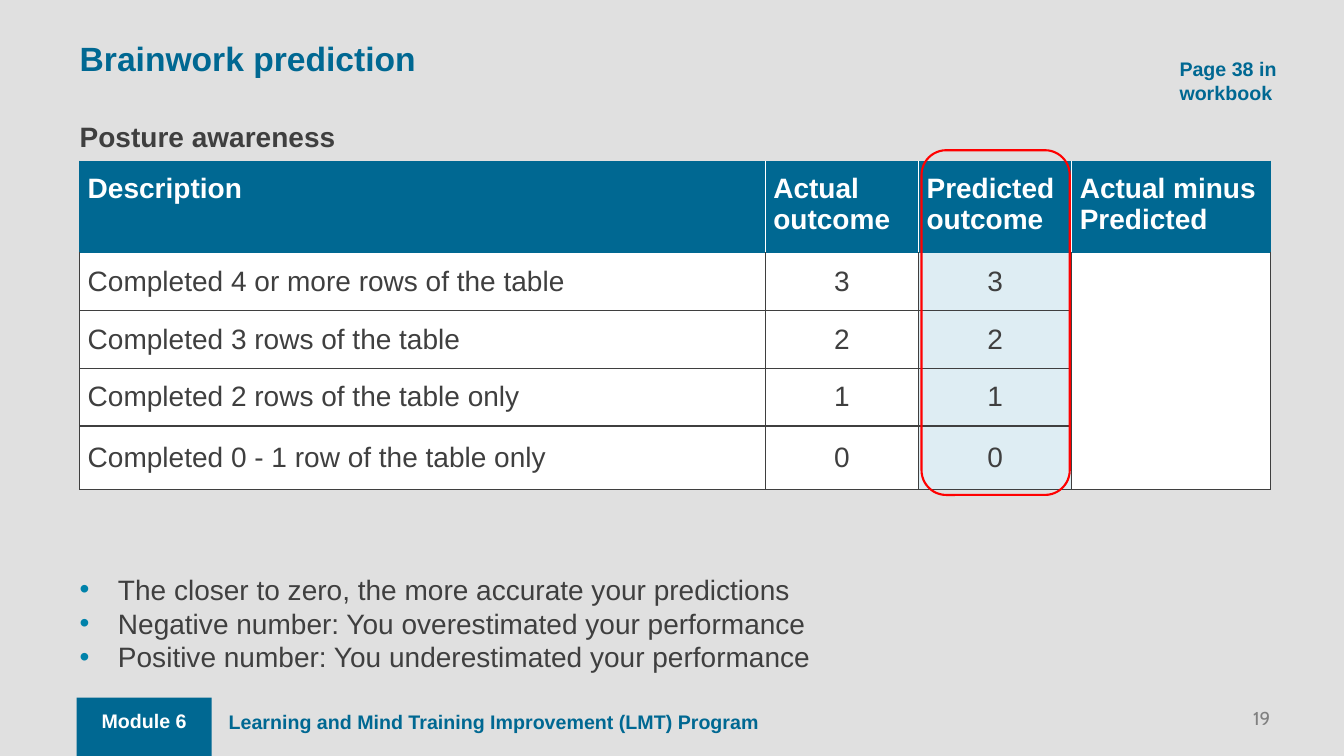
from lxml.etree import SubElement
from pptx import Presentation
from pptx.dml.color import RGBColor
from pptx.enum.shapes import MSO_SHAPE
from pptx.enum.text import MSO_ANCHOR, PP_ALIGN
from pptx.oxml.ns import qn
from pptx.util import Inches, Pt

COLORS = {
    "background": "E0E0E0", "teal": "006892", "bullet": "0082AA", "text": "3F3F3F",
    "white": "FFFFFF", "highlight": "DEEDF3", "red": "FF0000", "grey": "808080",
}
COLUMN_WIDTHS = [6.8, 1.52, 1.52, 1.97]
ROW_HEIGHTS = [0.9, 0.57, 0.57, 0.57, 0.63]
ROWS = [
    ["Description", "Actual outcome", "Predicted outcome", "Actual minus Predicted"],
    ["Completed 4 or more rows of the table", "3", "3", ""],
    ["Completed 3 rows of the table", "2", "2", ""],
    ["Completed 2 rows of the table only", "1", "1", ""],
    ["Completed 0 - 1 row of the table only", "0", "0", ""],
]
PREDICTED = 2
DIFFERENCE = 3
NOTES = [
    "The closer to zero, the more accurate your predictions",
    "Negative number: You overestimated your performance",
    "Positive number: You underestimated your performance",
]
DEFAULT_INSETS = (0.1, 0.05, 0.1, 0.05)
NO_INSETS = (0, 0, 0, 0)


def rgb(name):
    return RGBColor.from_string(COLORS[name])


class SlideBuilder:
    def __init__(self, slide, font="Arial"):
        self.slide = slide
        self.font = font

    def background(self, color):
        fill = self.slide.background.fill
        fill.solid()
        fill.fore_color.rgb = rgb(color)

    def format(self, paragraph, size, color, bold=False, align=PP_ALIGN.LEFT, font=None):
        paragraph.alignment = align
        for run in paragraph.runs:
            run.font.name = font or self.font
            run.font.size = Pt(size)
            run.font.bold = bold
            run.font.color.rgb = rgb(color)

    def text(self, box, text, size, color, insets=DEFAULT_INSETS,
             anchor=MSO_ANCHOR.TOP, **style):
        shape = self.slide.shapes.add_textbox(*map(Inches, box))
        frame = shape.text_frame
        frame.word_wrap = True
        frame.vertical_anchor = anchor
        (frame.margin_left, frame.margin_top,
         frame.margin_right, frame.margin_bottom) = map(Inches, insets)
        frame.text = text
        for paragraph in frame.paragraphs:
            self.format(paragraph, size, color, **style)
        return shape

    def bullets(self, box, lines, size, color):
        shape = self.text(box, "\n".join(lines), size, color, NO_INSETS)
        for paragraph in shape.text_frame.paragraphs:
            properties = paragraph._p.get_or_add_pPr()
            properties.set("marL", str(Inches(0.38)))
            properties.set("indent", str(-Inches(0.38)))
            bullet_color = SubElement(properties, qn("a:buClr"))
            SubElement(bullet_color, qn("a:srgbClr"), val=COLORS["bullet"])
            SubElement(properties, qn("a:buFont"), typeface="Arial")
            SubElement(properties, qn("a:buChar"), char="•")

    def shape(self, kind, box, fill=None, line=None):
        shape = self.slide.shapes.add_shape(kind, *map(Inches, box))
        shape.shadow.inherit = False
        if fill:
            shape.fill.solid()
            shape.fill.fore_color.rgb = rgb(fill)
        else:
            shape.fill.background()
        if line:
            shape.line.color.rgb = rgb(line)
            shape.line.width = Pt(1.5)
        else:
            shape.line.fill.background()

    def borders(self, cell, **sides):
        properties = cell._tc.get_or_add_tcPr()
        for side in "LRTB":
            line = SubElement(properties, qn(f"a:ln{side}"), w=str(Pt(1)))
            fill = SubElement(line, qn("a:solidFill"))
            SubElement(fill, qn("a:srgbClr"), val=COLORS[sides[side]])

    def cell(self, cell, text, row, column):
        header = row == 0
        inner = "white" if header else "text"
        edge = "teal" if header else "text"
        cell.margin_left = cell.margin_right = Inches(0.08)
        cell.margin_top = cell.margin_bottom = Inches(0.12)
        cell.vertical_anchor = MSO_ANCHOR.TOP if header else MSO_ANCHOR.MIDDLE
        self.borders(cell, L=inner if column else edge,
                     R=edge if column == DIFFERENCE else inner,
                     T="teal" if row <= 1 else "text", B=edge)
        cell.fill.solid()
        body_fill = "highlight" if column == PREDICTED else "white"
        cell.fill.fore_color.rgb = rgb("teal" if header else body_fill)
        cell.text_frame.text = text
        self.format(cell.text_frame.paragraphs[0], 20, inner, bold=header,
                    align=PP_ALIGN.LEFT if header or column == 0 else PP_ALIGN.CENTER)

    def table(self, left, top, rows):
        width, height = sum(COLUMN_WIDTHS), sum(ROW_HEIGHTS)
        table = self.slide.shapes.add_table(
            len(rows), len(rows[0]), *map(Inches, (left, top, width, height))).table
        table.first_row = table.horz_banding = False
        for column, column_width in zip(table.columns, COLUMN_WIDTHS):
            column.width = Inches(column_width)
        for row, row_height in zip(table.rows, ROW_HEIGHTS):
            row.height = Inches(row_height)
        for r, texts in enumerate(rows):
            for c, text in enumerate(texts):
                self.cell(table.cell(r, c), text, r, c)
        table.cell(1, DIFFERENCE).merge(table.cell(len(rows) - 1, DIFFERENCE))


def main():
    presentation = Presentation()
    presentation.slide_width = Inches(13.33)
    presentation.slide_height = Inches(7.5)
    builder = SlideBuilder(presentation.slides.add_slide(presentation.slide_layouts[6]))
    builder.background("background")

    # Footer
    builder.shape(MSO_SHAPE.RECTANGLE, (0.76, 6.92, 1.34, 0.58), fill="teal")
    builder.text((2.17, 6.99, 11.14, 0.47),
                 "Learning and Mind Training Improvement (LMT) Program", 14, "teal", bold=True)
    builder.text((0.76, 6.98, 1.34, 0.34), "Module 6", 14, "white", bold=True,
                 align=PP_ALIGN.CENTER)
    builder.text((10.6, 7.01, 2, 0.2), "19", 13.3, "grey", NO_INSETS,
                 align=PP_ALIGN.RIGHT, font="Cabin")

    # Headings
    builder.text((0.79, 0.34, 8.92, 0.47), "Brainwork prediction", 24, "teal", NO_INSETS,
                 MSO_ANCHOR.MIDDLE, bold=True)
    builder.text((0.79, 1.14, 4.41, 0.44), "Posture awareness", 20, "text",
                 (0, 0.05, 0.1, 0.05), bold=True)
    builder.text((11.6, 0.52, 1.38, 0.57), "Page 38 in workbook", 14, "teal", bold=True)

    # Prediction table with the predicted column ringed
    builder.table(0.79, 1.6, ROWS)
    builder.shape(MSO_SHAPE.ROUNDED_RECTANGLE, (9.14, 1.49, 1.47, 3.42), line="red")

    # Reading the result
    builder.bullets((0.79, 5.68, 11.81, 0.99), NOTES, 20, "text")

    presentation.save("out.pptx")


if __name__ == "__main__":
    main()
